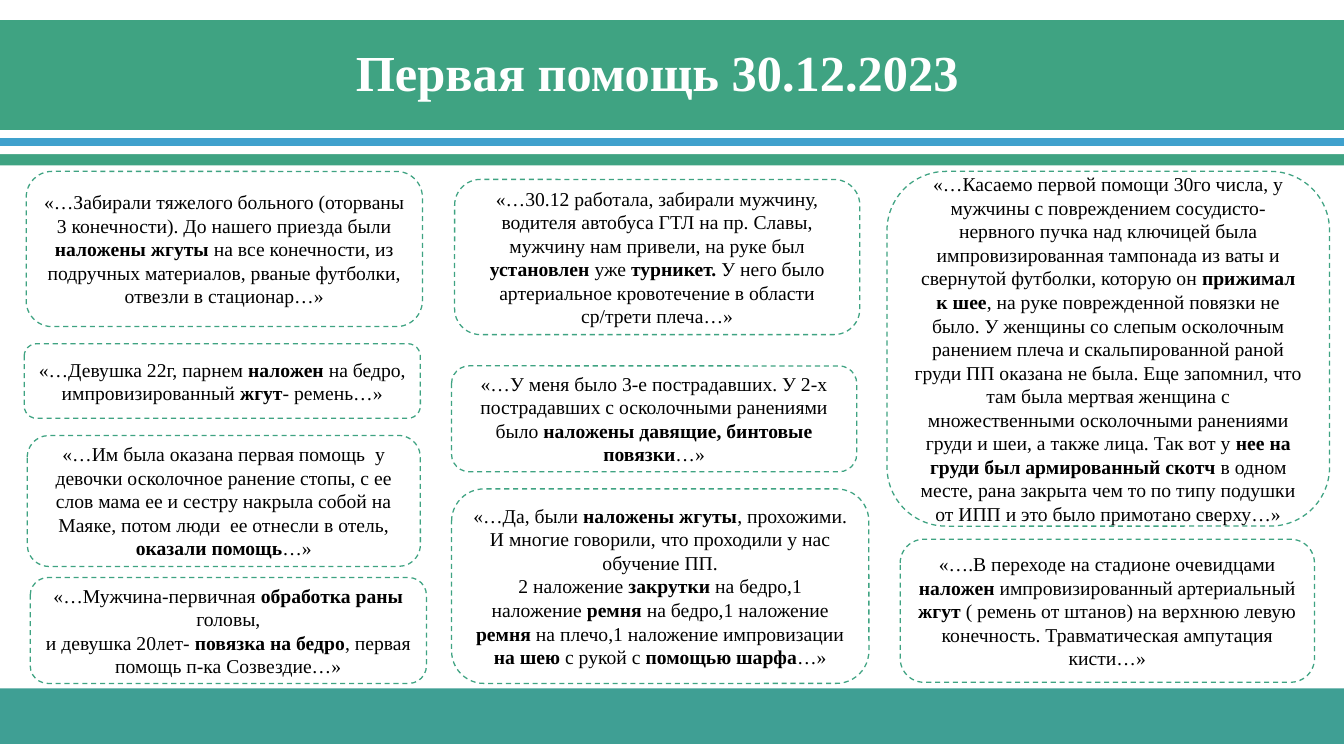
"""Build a slide of first-aid accounts."""
import dataclasses

import pptx
import pptx.dml.color
import pptx.enum.dml
import pptx.enum.shapes
import pptx.enum.text
import pptx.util


@dataclasses.dataclass(frozen=True)
class Theme:
    """Hold colours, font and type sizes."""
    green: str = "3FA382"
    teal: str = "3F9F94"
    blue: str = "3FA1CD"
    white: str = "FFFFFF"
    black: str = "000000"
    font: str = "Times New Roman"
    head: float = 36
    body: float = 14
    edge: float = 0.9


class Deck:
    """Draw elements placed in percent of the slide's size."""

    def __init__(self, theme):
        """Open a wide deck with one titled slide."""
        self.theme = theme
        self.prs = pptx.Presentation()
        self.prs.slide_width = pptx.util.Inches(13.33)
        self.prs.slide_height = pptx.util.Inches(7.5)
        self.slide = self.prs.slides.add_slide(self.prs.slide_layouts[5])

    def place(self, left, top, width, height):
        """Turn percentages into slide lengths."""
        wide, high = self.prs.slide_width, self.prs.slide_height
        return [int(part * size / 100) for part, size in
                zip((left, top, width, height), (wide, high, wide, high))]

    def shape(self, kind, area, fill):
        """Add a flat filled shape without an outline."""
        item = self.slide.shapes.add_shape(kind, *self.place(*area))
        item.shadow.inherit = False
        item.fill.solid()
        item.fill.fore_color.rgb = pptx.dml.color.RGBColor.from_string(fill)
        item.line.fill.background()
        return item

    def label(self, frame, text, size, color):
        """Fill a frame with centred lines, bold between asterisks."""
        frame.word_wrap = True
        for row, line in enumerate(text.split("\n")):
            para = frame.add_paragraph() if row else frame.paragraphs[0]
            para.alignment = pptx.enum.text.PP_ALIGN.CENTER
            for turn, words in enumerate(line.split("*")):
                if words:
                    run = para.add_run()
                    run.text = words
                    run.font.name = self.theme.font
                    run.font.size = pptx.util.Pt(size)
                    run.font.bold = turn % 2 == 1
                    run.font.color.rgb = pptx.dml.color.RGBColor.from_string(color)

    def band(self, top, height, fill):
        """Add a stripe across the slide."""
        self.shape(pptx.enum.shapes.MSO_SHAPE.RECTANGLE, (0, top, 100, height), fill)

    def title(self, text, area):
        """Set the title in front of the stripes."""
        item = self.slide.shapes.title
        item.left, item.top, item.width, item.height = self.place(*area)
        item.text_frame.auto_size = pptx.enum.text.MSO_AUTO_SIZE.NONE
        item.text_frame.vertical_anchor = pptx.enum.text.MSO_ANCHOR.TOP
        self.label(item.text_frame, text, self.theme.head, self.theme.white)
        self.slide.shapes.element.append(item.element)

    def card(self, area, text):
        """Add a quote in a dashed rounded frame."""
        kind = pptx.enum.shapes.MSO_SHAPE.ROUNDED_RECTANGLE
        item = self.shape(kind, area, self.theme.white)
        item.line.color.rgb = pptx.dml.color.RGBColor.from_string(self.theme.green)
        item.line.width = pptx.util.Pt(self.theme.edge)
        item.line.dash_style = pptx.enum.dml.MSO_LINE.DASH
        item.text_frame.vertical_anchor = pptx.enum.text.MSO_ANCHOR.MIDDLE
        self.label(item.text_frame, text, self.theme.body, self.theme.black)


QUOTES = [
    ((1.95, 22.67, 29.48, 20.53),
     "«…Забирали тяжелого больного (оторваны 3 конечности). До нашего приезда были "
     "*наложены жгуты *на все конечности, из подручных материалов, рваные футболки, "
     "отвезли в стационар…»"),
    ((1.8, 45.47, 29.48, 9.87),
     "«…Девушка 22г, парнем *наложен *на бедро, импровизированный *жгут*- ремень…»"),
    ((2.03, 57.6, 29.25, 17.33),
     "«…Им была оказана первая помощь  у девочки осколочное ранение стопы, с ее слов "
     "мама ее и сестру накрыла собой на Маяке, потом люди  ее отнесли в отель, "
     "*оказали помощь*…»"),
    ((2.25, 76.4, 29.48, 14),
     "«…Мужчина-первичная *обработка раны *головы,\n"
     "и девушка 20лет- *повязка на бедро*, первая помощь п-ка Созвездие…»"),
    ((33.83, 23.73, 30.15, 20.53),
     "«…30.12 работала, забирали мужчину, водителя автобуса ГТЛ на пр. Славы, мужчину "
     "нам привели, на руке был *установлен *уже *турникет. *У него было артериальное "
     "кровотечение в области ср/трети плеча…»"),
    ((33.6, 48.4, 30.15, 14),
     "«…У меня было 3-е пострадавших. У 2-х пострадавших с осколочными ранениями было "
     "*наложены давящие, бинтовые повязки*…»"),
    ((33.6, 64.67, 31.05, 25.73),
     "«…Да, были *наложены жгуты*, прохожими.\n"
     "И многие говорили, что проходили у нас обучение ПП.\n"
     "2 наложение *закрутки* на бедро,1 наложение *ремня* на бедро,1 наложение "
     "*ремня* на плечо,1 наложение импровизации *на шею* с рукой с *помощью шарфа*…»"),
    ((66, 22.67, 32.93, 46.93),
     "«…Касаемо первой помощи 30го числа, у мужчины с повреждением сосудисто-нервного "
     "пучка над ключицей была импровизированная тампонада из ваты и свернутой футболки, "
     "которую он *прижимал к шее*, на руке поврежденной повязки не было. У женщины со "
     "слепым осколочным ранением плеча и скальпированной раной груди ПП оказана не была. "
     "Еще запомнил, что там была мертвая женщина с множественными осколочными ранениями "
     "груди и шеи, а также лица. Так вот у *нее на груди был армированный скотч *в одном "
     "месте, рана закрыта чем то по типу подушки от ИПП и это было примотано сверху…»"),
    ((66.98, 71.33, 30.83, 18.93),
     "«….В переходе на стадионе очевидцами *наложен *импровизированный артериальный "
     "*жгут* ( ремень от штанов) на верхнюю левую конечность. Травматическая ампутация "
     "кисти…»"),
]


def main():
    """Draw the stripes, title and quotes."""
    theme = Theme()
    deck = Deck(theme)
    deck.band(91.07, 7.33, theme.teal)
    deck.band(2.67, 19.2, theme.green)
    for step, fill in enumerate((theme.white, theme.blue, theme.white)):
        deck.band(17.2 + 1.07 * step, 1.07, fill)
    deck.title("*Первая помощь 30.12.2023*", (22.35, 4.8, 53.1, 9.47))
    for area, text in QUOTES:
        deck.card(area, text)
    deck.prs.save("out.pptx")


if __name__ == "__main__":
    main()
